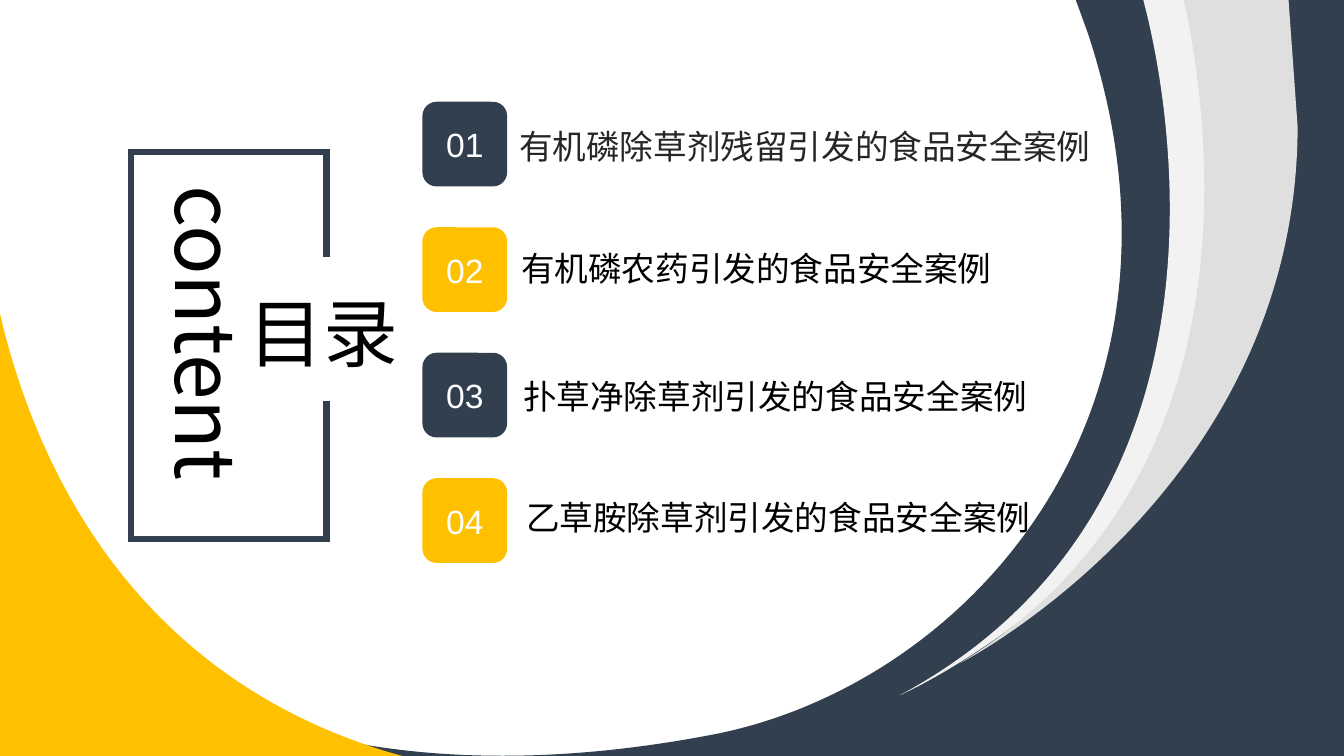
import pptx
import pptx.util
import pptx.dml.color
import pptx.enum.shapes
import pptx.enum.text
import pptx.oxml.ns
from lxml import etree

Inches = pptx.util.Inches
qn = pptx.oxml.ns.qn
COLORS = {
    "navy": "323F4F", "gold": "FFC000", "pale": "F3F2F2", "grey": "DFDFDF",
    "black": "000000", "dark": "262626", "white": "FFFFFF",
}
HAN = "Noto Sans CJK SC"


def color(name):
    return pptx.dml.color.RGBColor.from_string(COLORS[name])


def write(frame, text, size=24, font=HAN, ink="black", align=None):
    """Put one formatted run into a text frame."""
    para = frame.paragraphs[0]
    para.alignment = align
    run = para.add_run()
    run.text = text
    run.font.size = pptx.util.Pt(size)
    run.font.name = font
    run.font.color.rgb = color(ink)
    east = etree.SubElement(run.font._element, qn("a:ea"))
    east.set("typeface", font)


class Deck:
    def __init__(self):
        self.show = pptx.Presentation()
        self.show.slide_width = Inches(13.33)
        self.show.slide_height = Inches(7.5)
        self.slide = self.show.slides.add_slide(self.show.slide_layouts[6])
        self.shapes = self.slide.shapes

    def outline(self, nodes, close=True):
        """Draw nodes: 2 numbers make a line, 6 numbers a Bezier curve."""
        ends = [(Inches(node[-2]), Inches(node[-1])) for node in nodes]
        pen = self.shapes.build_freeform(*ends[0])
        pen.add_line_segments(ends[1:], close=close)
        shape = pen.convert_to_shape()
        shape.shadow.inherit = False
        # Bend the segments that have control points
        lines = list(shape._element.iter(qn("a:lnTo")))
        left, top = min(x for x, y in ends), min(y for x, y in ends)
        for line, node in zip(lines, nodes[1:]):
            if len(node) == 6:
                curve = etree.Element(qn("a:cubicBezTo"))
                for x, y in zip(node[::2], node[1::2]):
                    point = etree.SubElement(curve, qn("a:pt"))
                    point.set("x", str(Inches(x) - left))
                    point.set("y", str(Inches(y) - top))
                line.getparent().replace(line, curve)
        return shape

    def area(self, nodes, fill):
        shape = self.outline(nodes)
        shape.fill.solid()
        shape.fill.fore_color.rgb = color(fill)
        shape.line.fill.background()

    def stroke(self, nodes, ink, width):
        shape = self.outline(nodes, close=False)
        shape.fill.background()
        shape.line.color.rgb = color(ink)
        shape.line.width = pptx.util.Pt(width)
        join = etree.SubElement(shape.line._get_or_add_ln(), qn("a:miter"))
        join.set("lim", "800000")

    def label(self, box, text, vert=None, **style):
        frame = self.shapes.add_textbox(*map(Inches, box)).text_frame
        frame.word_wrap = False
        frame.auto_size = pptx.enum.text.MSO_AUTO_SIZE.SHAPE_TO_FIT_TEXT
        if vert:
            frame._txBody.bodyPr.set("vert", vert)
        write(frame, text, **style)

    def badge(self, left, top, side, text, fill):
        kind = pptx.enum.shapes.MSO_SHAPE.ROUNDED_RECTANGLE
        shape = self.shapes.add_shape(kind, *map(Inches, (left, top, side, side)))
        shape.shadow.inherit = False
        shape.fill.solid()
        shape.fill.fore_color.rgb = color(fill)
        shape.line.fill.background()
        shape.text_frame.vertical_anchor = pptx.enum.text.MSO_ANCHOR.MIDDLE
        write(shape.text_frame, text, font="Arial", ink="white",
              align=pptx.enum.text.PP_ALIGN.CENTER)


def main():
    deck = Deck()

    # Curved background
    deck.area([(10.67, 0), (13.33, 0), (13.33, 7.5), (2.11, 7.5), (1.71, 6.7),
               (1.71, 6.7, 3.4, 7.99, 7.06, 7.29),
               (9.57, 6.81, 12.04, 4.12, 10.79, 0.33)], "navy")
    deck.area([(0, 3.11), (0.04, 3.28), (0.44, 4.83, 1.44, 6.73, 3.85, 7.46),
               (3.99, 7.5), (0, 7.5)], "gold")
    deck.area([(11.34, 0), (12.63, 0), (12.65, 0), (12.65, 1.76),
               (12.39, 5.37, 8.92, 6.9, 8.92, 6.9),
               (12.46, 5, 11.55, 0.81, 11.35, 0.04)], "pale")
    deck.area([(11.74, 0), (12.78, 0), (12.87, 1.26),
               (12.86, 4.87, 9.52, 6.58, 9.52, 6.58),
               (12.33, 4.86, 12.07, 1.6, 11.76, 0.08)], "grey")

    # Title group with its open frame
    deck.shapes = deck.slide.shapes.add_group_shape().shapes
    deck.label((2.37, 2.8, 1.7, 1), "目录", size=53.4)
    deck.stroke([(3.24, 3.98), (3.24, 5.35), (1.3, 5.35), (1.3, 1.51), (3.24, 1.51),
                 (3.24, 2.15, 3.24, 2.55, 3.24, 2.55)], "navy", 4.5)
    deck.label((1.41, 1.74, 1.19, 3.12), "content", vert="eaVert", size=58.6)
    deck.shapes = deck.slide.shapes

    # Numbered badges
    for row in range(4):
        deck.badge(4.19, 1.01 + 1.245 * row, 0.84, f"{row + 1:02}", ("navy", "gold")[row % 2])

    # Contents entries
    entries = [
        (5.05, 1.2, 5.87, "有机磷除草剂残留引发的食品安全案例", "dark"),
        (5.07, 2.41, 4.87, "有机磷农药引发的食品安全案例", "black"),
        (5.09, 3.68, 5.2, "扑草净除草剂引发的食品安全案例", "black"),
        (5.12, 4.88, 5.2, "乙草胺除草剂引发的食品安全案例", "black"),
    ]
    for left, top, width, text, ink in entries:
        deck.label((left, top, width, 0.5), text, ink=ink)

    deck.show.save("out.pptx")


if __name__ == "__main__":
    main()
